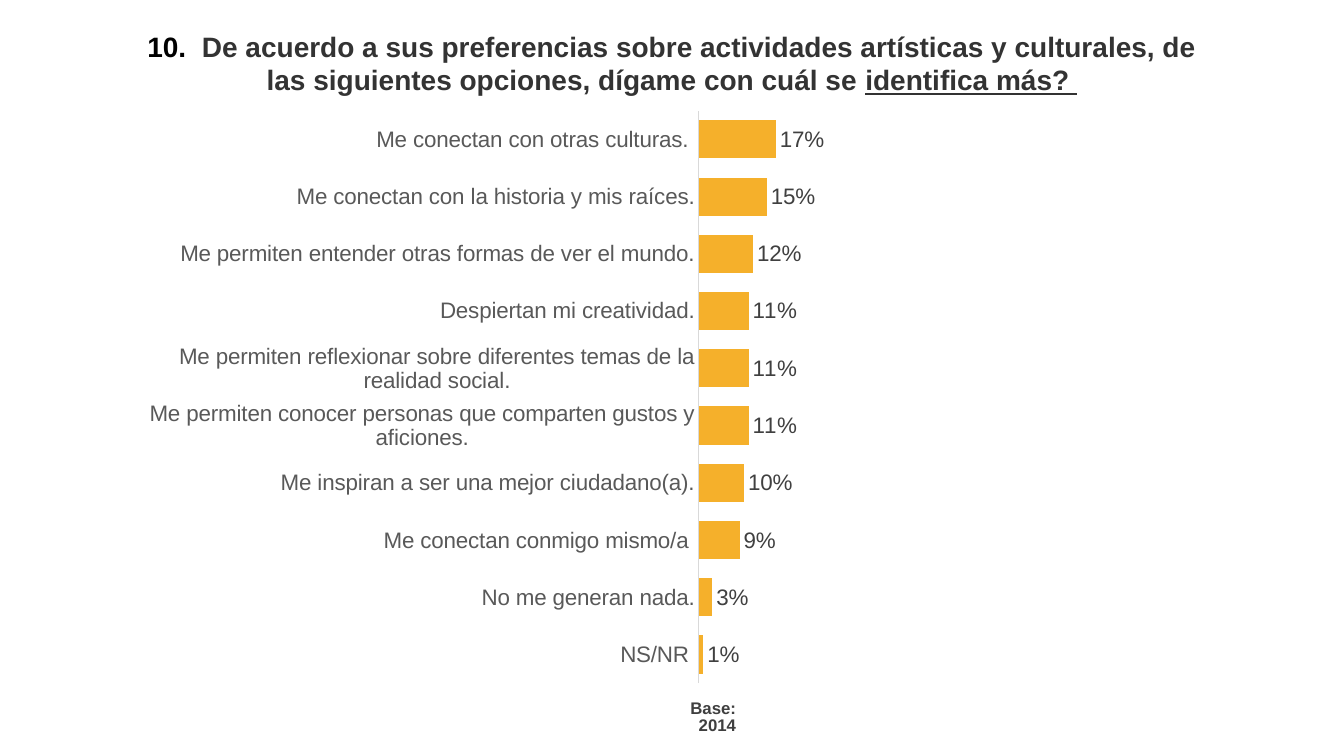
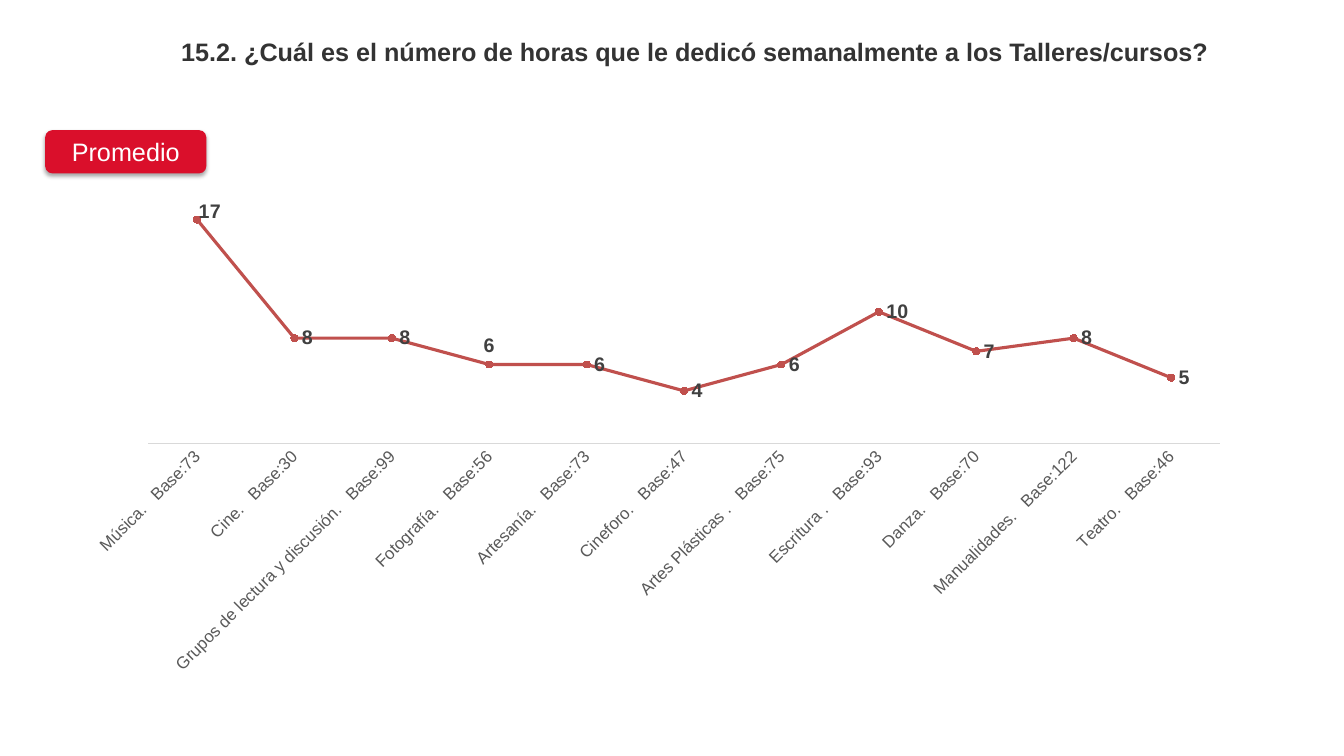
from lxml.etree import SubElement
from pptx import Presentation
from pptx.chart.data import CategoryChartData
from pptx.dml.color import RGBColor
from pptx.enum.chart import XL_CHART_TYPE, XL_LABEL_POSITION, XL_MARKER_STYLE, XL_TICK_MARK
from pptx.enum.shapes import MSO_SHAPE
from pptx.enum.text import MSO_ANCHOR, MSO_AUTO_SIZE, PP_ALIGN
from pptx.oxml import parse_xml
from pptx.oxml.ns import nsdecls, qn
from pptx.util import Cm, Pt

FONT = "Arial"
BLACK, INK, GRAY, DARK, RULE = "000000", "333333", "595959", "404040", "D9D9D9"
AMBER, BRICK, RED, WHITE = "F5B02B", "C0504D", "DA0F2B", "FFFFFF"

PREFERENCES = [
    ("Me conectan con otras culturas. ", 0.17),
    ("Me conectan con la historia y mis raíces.", 0.15),
    ("Me permiten entender otras formas de ver el mundo.", 0.12),
    ("Despiertan mi creatividad.", 0.11),
    ("Me permiten reflexionar sobre diferentes temas de la realidad social.", 0.11),
    ("Me permiten conocer personas que comparten gustos y aficiones.", 0.11),
    ("Me inspiran a ser una mejor ciudadano(a).", 0.1),
    ("Me conectan conmigo mismo/a ", 0.09),
    ("No me generan nada.", 0.03),
    ("NS/NR ", 0.01),
]
WORKSHOPS = [
    ("Música.   Base:73", 17),
    ("Cine.   Base:30", 8),
    ("Grupos de lectura y discusión.   Base:99", 8),
    ("Fotografía.   Base:56", 6),
    ("Artesanía.   Base:73", 6),
    ("Cineforo.   Base:47", 4),
    ("Artes Plásticas .   Base:75", 6),
    ("Escritura .   Base:93", 10),
    ("Danza.   Base:70", 7),
    ("Manualidades.   Base:122", 8),
    ("Teatro.   Base:46", 5),
]


def color(value):
    return RGBColor.from_string(value)


def style_font(font, size, tone, bold=False):
    font.name = FONT
    font.size = Pt(size)
    font.bold = bold
    font.color.rgb = color(tone)


def add_span(para, text, size, tone, bold=False, underline=False):
    span = para.add_run()
    span.text = text
    style_font(span.font, size, tone, bold)
    if underline:
        span.font.underline = True


def lengths(box):
    return [Cm(value) for value in box]


def add_title(page, box, size, spans):
    title = page.shapes.title
    title.left, title.top, title.width, title.height = lengths(box)
    frame = title.text_frame
    frame.word_wrap = True
    frame.auto_size = MSO_AUTO_SIZE.SHAPE_TO_FIT_TEXT
    frame.vertical_anchor = MSO_ANCHOR.TOP
    para = frame.paragraphs[0]
    para.alignment = PP_ALIGN.CENTER
    for text, tone, underline in spans:
        add_span(para, text, size, tone, True, underline)


def add_base_note(page, box, text):
    frame = page.shapes.add_textbox(*lengths(box)).text_frame
    frame.word_wrap = True
    frame.auto_size = MSO_AUTO_SIZE.SHAPE_TO_FIT_TEXT
    para = frame.paragraphs[0]
    para.alignment = PP_ALIGN.RIGHT
    para.line_spacing = 0.83
    add_span(para, text, 12, "3F3F3F", True)


def add_badge(page, box, text):
    badge = page.shapes.add_shape(MSO_SHAPE.ROUNDED_RECTANGLE, *lengths(box))
    badge.shadow.inherit = False
    badge.fill.solid()
    badge.fill.fore_color.rgb = color(RED)
    badge.line.fill.background()
    effects = badge._element.spPr.find(qn("a:effectLst"))
    shadow = SubElement(effects, qn("a:outerShdw"), blurRad=str(Pt(3.1)), dist=str(Pt(1.8)),
                        dir="5400000", rotWithShape="0")
    tone = SubElement(shadow, qn("a:srgbClr"), val=BLACK)
    SubElement(tone, qn("a:alpha"), val="35000")
    badge.text_frame.vertical_anchor = MSO_ANCHOR.MIDDLE
    para = badge.text_frame.paragraphs[0]
    para.alignment = PP_ALIGN.CENTER
    add_span(para, text, 18, WHITE)


def manual_layout(**values):
    parts = "".join(f'<c:{name} val="{value}"/>' for name, value in values.items())
    return parse_xml(f'<c:layout {nsdecls("c")}><c:manualLayout>{parts}</c:manualLayout></c:layout>')


def add_survey_chart(page, box, kind, rows, plot_box, maximum, number_format, axis_size, label_size, bold):
    data = CategoryChartData(number_format=number_format)
    data.categories = [name for name, value in rows]
    data.add_series("Series 1", [value for name, value in rows])
    chart = page.shapes.add_chart(kind, *lengths(box), data).chart
    chart.has_title = False
    chart.has_legend = False
    style_font(chart.font, axis_size, BLACK)

    plot_area = chart._chartSpace.xpath("c:chart/c:plotArea")[0]
    for layout in plot_area.findall(qn("c:layout")):
        plot_area.remove(layout)
    left, top, width, height = plot_box
    plot_area.insert(0, manual_layout(layoutTarget="inner", xMode="edge", yMode="edge",
                                      x=left, y=top, w=width, h=height))

    names = chart.category_axis
    names.has_major_gridlines = False
    names.major_tick_mark = names.minor_tick_mark = XL_TICK_MARK.NONE
    names.format.line.color.rgb = color(RULE)
    names.format.line.width = Pt(0.75)
    style_font(names.tick_labels.font, axis_size, GRAY)

    scale = chart.value_axis
    scale.has_major_gridlines = False
    scale.minimum_scale, scale.maximum_scale = 0, maximum
    scale.visible = False

    plot = chart.plots[0]
    plot.vary_by_categories = False
    plot.has_data_labels = True
    labels = plot.data_labels
    labels.show_value = True
    labels.number_format = number_format
    labels.number_format_is_linked = False
    style_font(labels.font, label_size, DARK, bold)
    return chart


def add_preference_bars(page, box):
    chart = add_survey_chart(page, box, XL_CHART_TYPE.BAR_CLUSTERED, PREFERENCES,
                             (0.546, 0.02, 0.434, 0.958), 1, "0%", 16, 16, False)
    chart.category_axis.reverse_order = True
    plot = chart.plots[0]
    plot.gap_width = 50
    plot.data_labels.position = XL_LABEL_POSITION.OUTSIDE_END
    fill = plot.series[0].format.fill
    fill.solid()
    fill.fore_color.rgb = color(AMBER)


def add_hours_line(page, box):
    chart = add_survey_chart(page, box, XL_CHART_TYPE.LINE_MARKERS, WORKSHOPS,
                             (0.064, 0.03, 0.915, 0.482), 18, "###0", 12, 14, True)
    chart.category_axis._element.xpath("c:txPr/a:bodyPr")[0].set("rot", "-2700000")
    plot = chart.plots[0]
    plot.data_labels.position = XL_LABEL_POSITION.RIGHT
    series = plot.series[0]
    series.smooth = False
    series.format.line.color.rgb = color(BRICK)
    series.format.line.width = Pt(2.25)
    marker = series.marker
    marker.style = XL_MARKER_STYLE.CIRCLE
    marker.size = 5
    marker.format.fill.solid()
    marker.format.fill.fore_color.rgb = color(BRICK)
    marker.format.line.color.rgb = color(BRICK)

    series_labels = series.data_labels
    series_labels.show_value = True
    series_labels.position = XL_LABEL_POSITION.RIGHT
    style_font(series_labels.font, 14, DARK, True)
    for index, position in ((0, XL_LABEL_POSITION.RIGHT), (3, XL_LABEL_POSITION.ABOVE)):
        label = series.points[index].data_label
        style_font(label.font, 14, DARK, True)
        label.position = position
    first_label = series._element.xpath("c:dLbls/c:dLbl")[0]
    first_label.insert(1, manual_layout(x=-0.005, y=-0.016))


def build_preferences(page):
    add_title(page, (2.95, 0.61, 27.97, 1.96), 20, [
        ("10.  ", BLACK, False),
        ("De acuerdo a sus preferencias sobre actividades artísticas y culturales, "
         "de las siguientes opciones, dígame con cuál se ", INK, False),
        ("identifica más? ", INK, True),
    ])
    add_base_note(page, (16.36, 17.55, 2.44, 0.64), "Base: 2014")
    add_preference_bars(page, (3.25, 2.49, 26.31, 15.06))


def build_hours(page):
    add_title(page, (3.2, 0.8, 28.8, 1.03), 18, [
        ("15.2. ¿Cuál es el número de horas que le dedicó semanalmente a los Talleres/cursos? ", INK, False),
    ])
    add_hours_line(page, (1.85, 4.83, 29.51, 12.4))
    add_badge(page, (1.14, 3.28, 4.06, 1.09), "Promedio")


def main():
    deck = Presentation()
    deck.slide_width, deck.slide_height = Cm(33.87), Cm(19.05)
    for build in (build_preferences, build_hours):
        build(deck.slides.add_slide(deck.slide_layouts[5]))
    deck.save("out.pptx")


if __name__ == "__main__":
    main()
